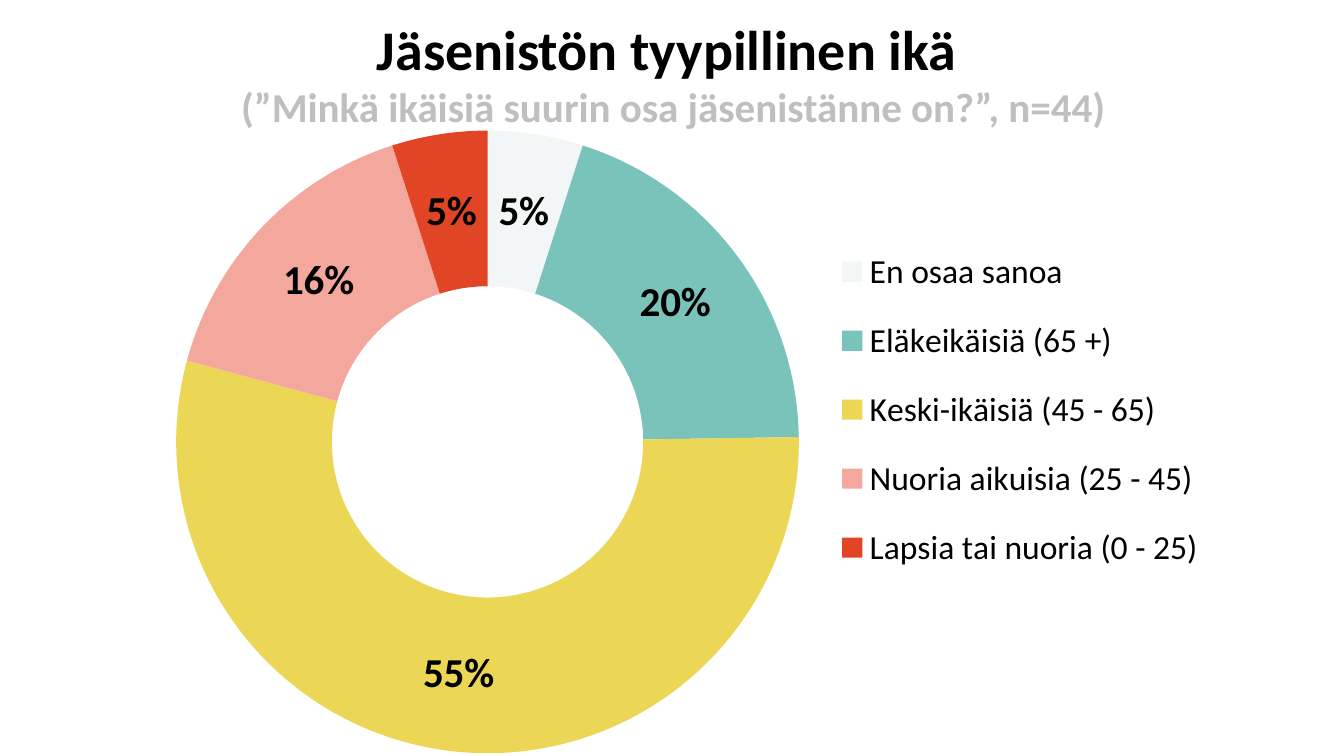
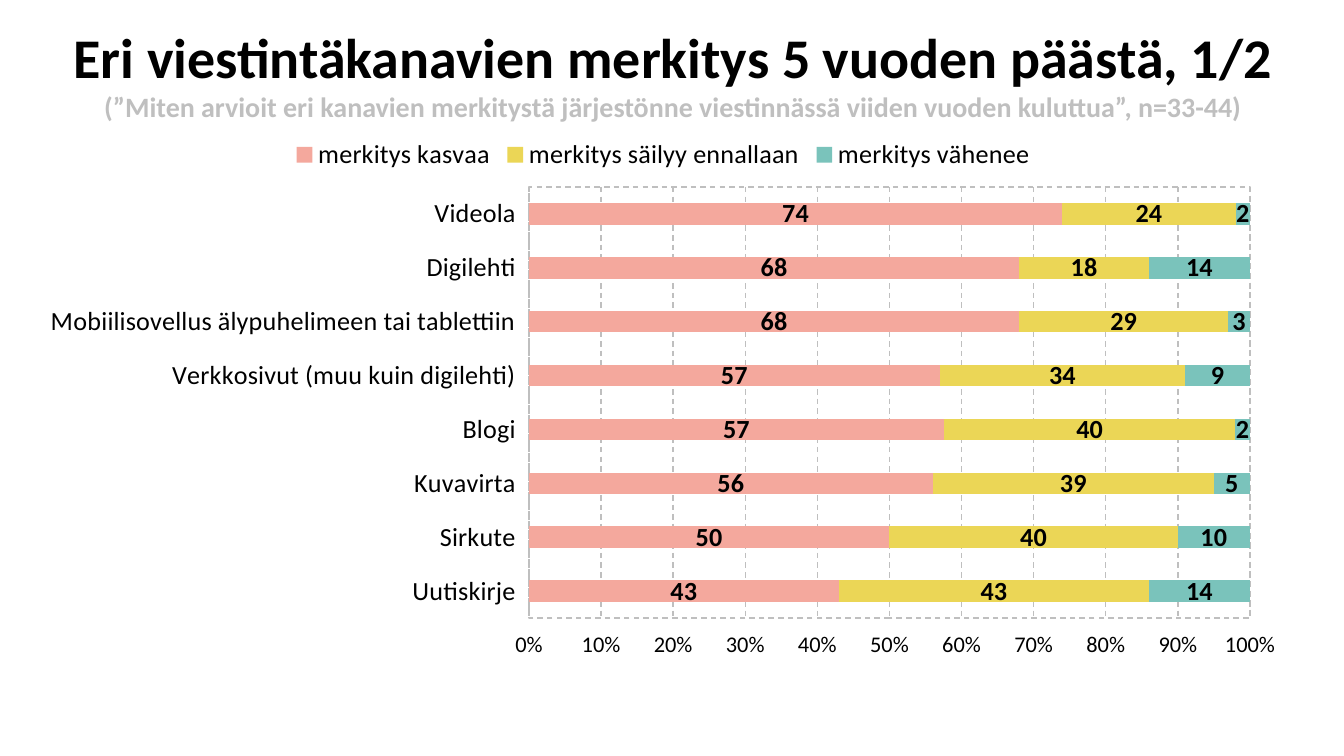
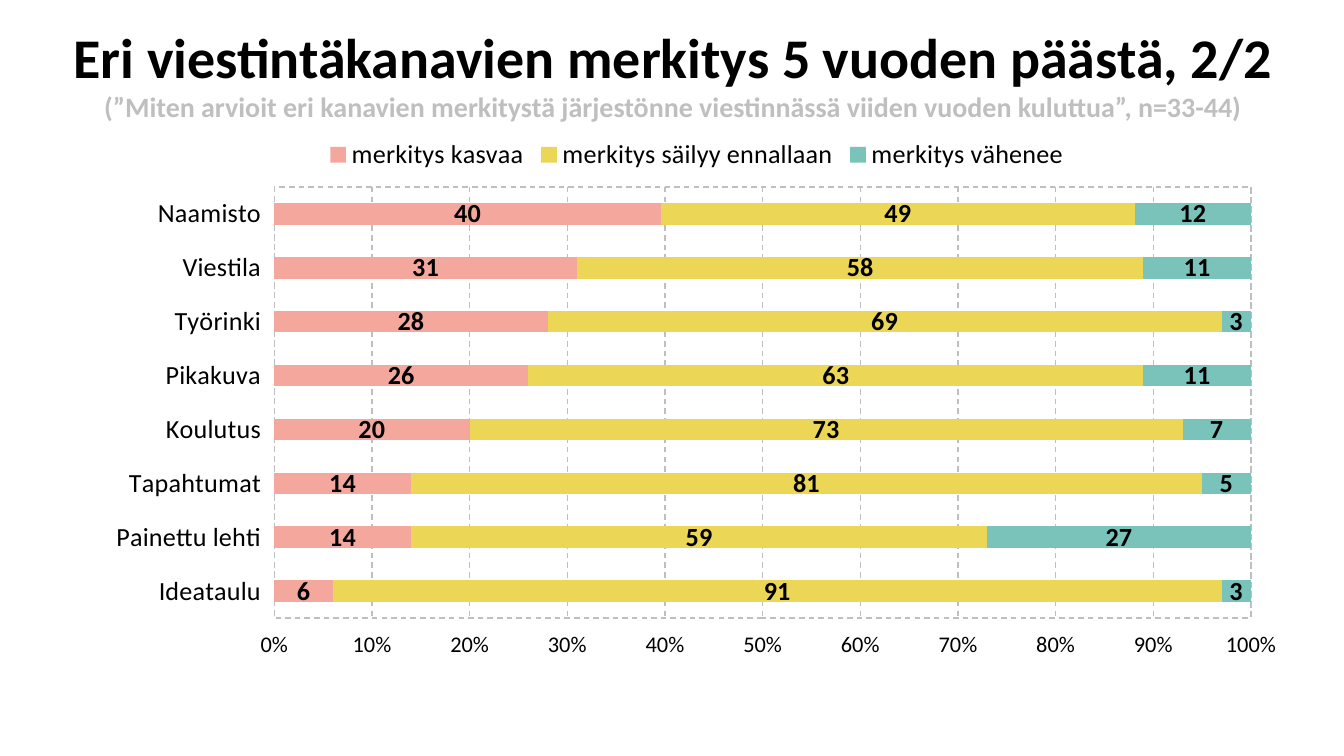
from lxml.etree import SubElement
from pptx import Presentation
from pptx.chart.data import CategoryChartData
from pptx.dml.color import RGBColor
from pptx.enum.chart import XL_CHART_TYPE, XL_LEGEND_POSITION, XL_TICK_LABEL_POSITION, XL_TICK_MARK
from pptx.enum.dml import MSO_LINE
from pptx.enum.text import MSO_ANCHOR, MSO_AUTO_SIZE, PP_ALIGN
from pptx.oxml import parse_xml
from pptx.oxml.ns import nsdecls, qn
from pptx.util import Pt

BLACK = RGBColor(0x00, 0x00, 0x00)
WHITE = RGBColor(0xFF, 0xFF, 0xFF)
GREY = RGBColor(0xBF, 0xBF, 0xBF)
RED = RGBColor(0xE2, 0x44, 0x26)
PINK = RGBColor(0xF4, 0xA8, 0x9D)
YELLOW = RGBColor(0xEB, 0xD6, 0x56)
TEAL = RGBColor(0x7A, 0xC3, 0xBB)
PALE = RGBColor(0xF2, 0xF6, 0xF7)

TITLE_BOX = (24.5, 0, 672.5, 77.8)
CHART_FONT = {"name": "Calibri", "size": Pt(18), "color": RED}
HEADING = {"name": "Calibri", "size": Pt(30), "bold": True, "color": BLACK}

AGE_SHARES = [
    ("En osaa sanoa", 0.05, PALE),
    ("Eläkeikäisiä (65 +)", 0.2, TEAL),
    ("Keski-ikäisiä (45 - 65)", 0.55, YELLOW),
    ("Nuoria aikuisia (25 - 45)", 0.16, PINK),
    ("Lapsia tai nuoria (0 - 25)", 0.05, RED),
]
OUTLOOKS = [
    ("merkitys kasvaa", PINK),
    ("merkitys säilyy ennallaan", YELLOW),
    ("merkitys vähenee", TEAL),
]
CHANNEL_QUESTION = (
    "(”Miten arvioit eri kanavien merkitystä järjestönne viestinnässä "
    "viiden vuoden kuluttua”, n=33-44)"
)
CHANNEL_PAGES = [
    {
        "heading": "Eri viestintäkanavien merkitys 5 vuoden päästä, 1/2",
        "box": (13.7, 66.2, 683.3, 292.3),
        "plot_box": (283.4, 100.2, 386.3, 231),
        "channels": [
            ("Uutiskirje", 43, 43, 14),
            ("Sirkute", 50, 40, 10),
            ("Kuvavirta", 56, 39, 5),
            ("Blogi", 57, 40, 2),
            ("Verkkosivut (muu kuin digilehti)", 57, 34, 9),
            ("Mobiilisovellus älypuhelimeen tai tablettiin", 68, 29, 3),
            ("Digilehti", 68, 18, 14),
            ("Videola", 74, 24, 2),
        ],
    },
    {
        "heading": "Eri viestintäkanavien merkitys 5 vuoden päästä, 2/2",
        "box": (49.7, 66.2, 647.3, 292.3),
        "plot_box": (147, 100.2, 523.2, 231),
        "channels": [
            ("Ideataulu", 6, 91, 3),
            ("Painettu lehti", 14, 59, 27),
            ("Tapahtumat", 14, 81, 5),
            ("Koulutus", 20, 73, 7),
            ("Pikakuva", 26, 63, 11),
            ("Työrinki", 28, 69, 3),
            ("Viestila", 31, 58, 11),
            ("Naamisto", 40, 49, 12),
        ],
    },
]


def apply_format(target, values):
    for name, value in values.items():
        if name == "color":
            target.color.rgb = value
        else:
            setattr(target, name, value)


def points(box):
    return [Pt(length) for length in box]


def place_part(element, position, chart_box, part_box, inner=False):
    for old in element.findall(qn("c:layout")):
        element.remove(old)
    layout = parse_xml(f"<c:layout {nsdecls('c')}/>")
    manual = SubElement(layout, qn("c:manualLayout"))
    left, top, width, height = chart_box
    part_left, part_top, part_width, part_height = part_box
    settings = {"layoutTarget": "inner"} if inner else {}
    settings.update({
        "xMode": "edge",
        "yMode": "edge",
        "x": (part_left - left) / width,
        "y": (part_top - top) / height,
        "w": part_width / width,
        "h": part_height / height,
    })
    for tag, value in settings.items():
        SubElement(manual, qn(f"c:{tag}")).set("val", str(value))
    element.insert(position, layout)


def add_title(page, box, heading, question, question_size):
    title = page.shapes.title
    title.left, title.top, title.width, title.height = points(box)
    title.fill.solid()
    title.fill.fore_color.rgb = WHITE
    color = title.element.spPr.find(".//" + qn("a:srgbClr"))
    SubElement(color, qn("a:alpha")).set("val", "93000")
    frame = title.text_frame
    apply_format(frame, {
        "word_wrap": True,
        "auto_size": MSO_AUTO_SIZE.NONE,
        "vertical_anchor": MSO_ANCHOR.MIDDLE,
    })
    para = frame.paragraphs[0]
    para.alignment = PP_ALIGN.CENTER
    span = para.add_run()
    span.text = heading
    apply_format(span.font, HEADING)
    para.add_line_break()
    span = para.add_run()
    span.text = question
    apply_format(span.font, {**HEADING, "size": Pt(question_size), "color": GREY})
    return title


def add_chart(page, kind, box, plot_box, data, legend_position, legend_font):
    frame = page.shapes.add_chart(kind, *points(box), data)
    chart = frame.chart
    chart.has_title = False
    apply_format(chart.font, CHART_FONT)
    chart.has_legend = True
    apply_format(chart.legend, {"position": legend_position, "include_in_layout": False})
    apply_format(chart.legend.font, legend_font)
    place_part(chart.element.chart.plotArea, 0, box, plot_box, inner=True)
    return frame


def label_values(series, size, number_format):
    labels = series.data_labels
    apply_format(labels, {
        "show_value": True,
        "show_percentage": False,
        "number_format": number_format,
        "number_format_is_linked": False,
    })
    apply_format(labels.font, {**HEADING, "size": Pt(size)})


def fill_solid(part, color):
    part.format.fill.solid()
    part.format.fill.fore_color.rgb = color


def style_axes(chart):
    category_axis, value_axis = chart.category_axis, chart.value_axis
    for axis, size, tick in (
        (category_axis, 14, XL_TICK_MARK.NONE),
        (value_axis, 12, XL_TICK_MARK.OUTSIDE),
    ):
        apply_format(axis, {"major_tick_mark": tick, "minor_tick_mark": XL_TICK_MARK.NONE})
        apply_format(axis.tick_labels.font, {"size": Pt(size), "color": BLACK})
        axis.format.line.fill.background()
    category_axis.tick_label_position = XL_TICK_LABEL_POSITION.LOW
    apply_format(value_axis.tick_labels, {
        "number_format": "0%",
        "number_format_is_linked": False,
    })
    value_axis.has_major_gridlines = True
    apply_format(value_axis.major_gridlines.format.line, {
        "color": GREY, "width": Pt(0.75), "dash_style": MSO_LINE.DASH,
    })


def outline_plot(chart):
    chart.element.chart.plotArea.append(parse_xml(
        f'<c:spPr {nsdecls("c", "a")}><a:noFill/><a:ln w="{Pt(0.75)}">'
        f'<a:solidFill><a:srgbClr val="{GREY}"/></a:solidFill>'
        '<a:prstDash val="dash"/></a:ln></c:spPr>'
    ))


def build_age_page(page):
    add_title(page, TITLE_BOX, "Jäsenistön tyypillinen ikä ",
              "(”Minkä ikäisiä suurin osa jäsenistänne on?”, n=44)", 22)
    names, shares, colors = zip(*AGE_SHARES)
    data = CategoryChartData(number_format="0%")
    data.categories = names
    data.add_series("Series 1", shares)
    box = (74.9, 60.5, 581.8, 353.5)
    chart = add_chart(page, XL_CHART_TYPE.DOUGHNUT, box, (94.4, 70, 333.6, 333.6),
                      data, XL_LEGEND_POSITION.RIGHT, {"color": BLACK}).chart
    place_part(chart.legend._element, 1, box, (444, 119.5, 205, 200))
    series = chart.plots[0].series[0]
    for index, color in enumerate(colors):
        fill_solid(series.points[index], color)
    label_values(series, 22, "0%")


def build_channel_page(page, heading, box, plot_box, channels):
    title = add_title(page, TITLE_BOX, heading, CHANNEL_QUESTION, 15)
    names, *columns = zip(*channels)
    data = CategoryChartData(number_format="0")
    data.categories = names
    for (outlook, _), values in zip(OUTLOOKS, columns):
        data.add_series(outlook, values)
    frame = add_chart(page, XL_CHART_TYPE.BAR_STACKED_100, box, plot_box, data,
                      XL_LEGEND_POSITION.TOP, {"size": Pt(14), "color": BLACK})
    frame.element.addnext(title.element)
    chart = frame.chart
    plot = chart.plots[0]
    apply_format(plot, {"gap_width": 150, "overlap": 100, "vary_by_categories": False})
    for series, (_, color) in zip(plot.series, OUTLOOKS):
        fill_solid(series, color)
        label_values(series, 14, "0")
    style_axes(chart)
    outline_plot(chart)


def main():
    deck = Presentation()
    deck.slide_width, deck.slide_height = Pt(720), Pt(405)
    layout = deck.slide_layouts[5]
    build_age_page(deck.slides.add_slide(layout))
    for content in CHANNEL_PAGES:
        build_channel_page(deck.slides.add_slide(layout), **content)
    deck.save("out.pptx")


if __name__ == "__main__":
    main()
